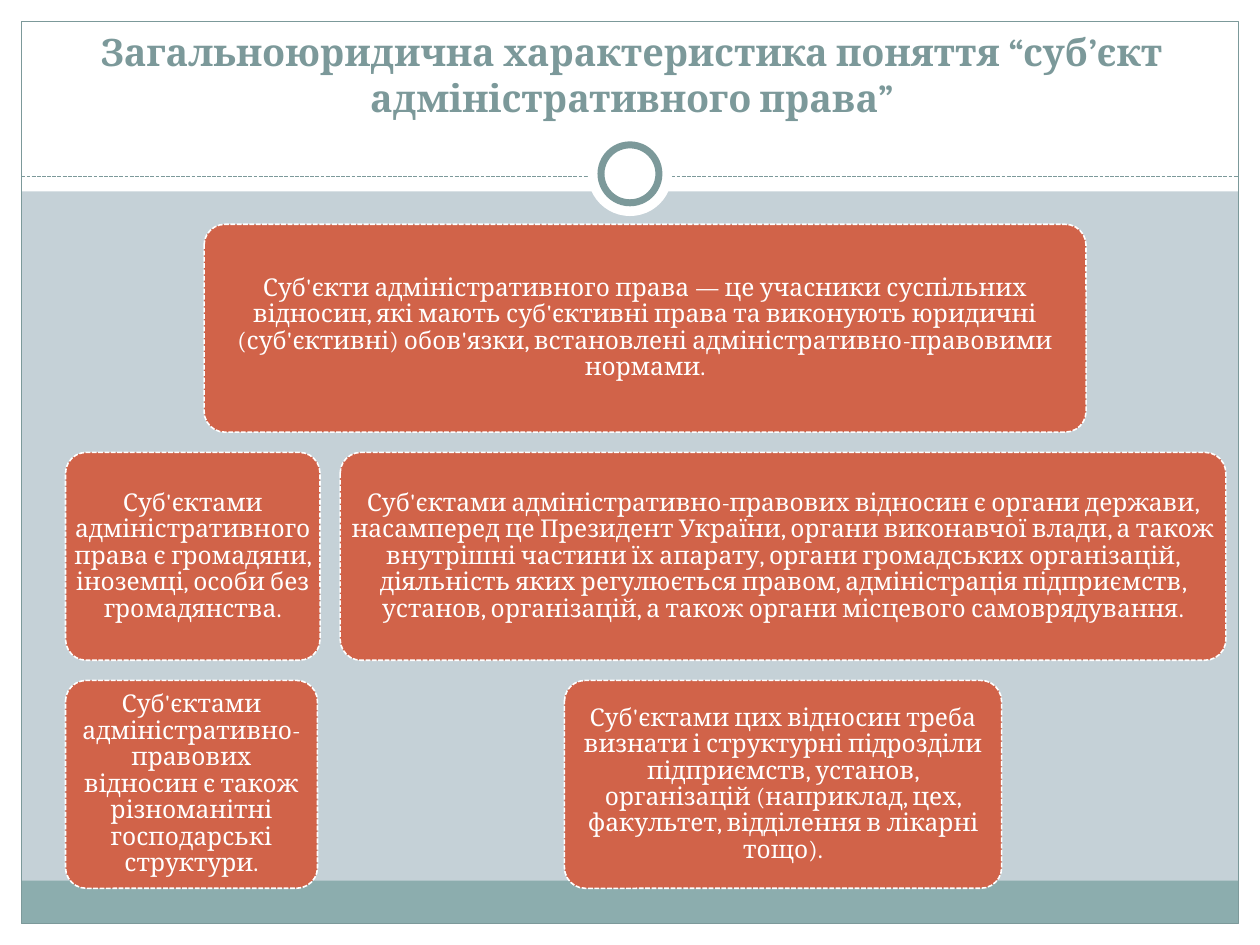
from lxml.etree import SubElement
from pptx import Presentation
from pptx.dml.color import RGBColor
from pptx.enum.dml import MSO_LINE
from pptx.enum.shapes import MSO_CONNECTOR, MSO_SHAPE
from pptx.enum.text import MSO_ANCHOR, PP_ALIGN
from pptx.oxml.ns import qn
from pptx.util import Inches, Pt

WHITE = RGBColor(0xFF, 0xFF, 0xFF)
MIST = RGBColor(0xC5, 0xD1, 0xD7)
TEAL = RGBColor(0x8C, 0xAD, 0xAE)
SLATE = RGBColor(0x7C, 0x99, 0x9A)
RUST = RGBColor(0xD1, 0x63, 0x49)

WIDTH, HEIGHT, MARGIN = 10, 7.5, 0.17
BOX_HEIGHT, ROW_STEP, FIRST_ROW = 1.65, 1.81, 1.78

TITLE = "Загальноюридична характеристика поняття “суб’єкт адміністративного права”"
BOXES = [
    (0, 1.62, 7, "Суб'єкти адміністративного права — це учасники суспільних відносин, "
     "які мають суб'єктивні права та виконують юридичні (суб'єктивні) обов'язки, "
     "встановлені адміністративно-правовими нормами."),
    (1, 0.52, 2.02, "Суб'єктами адміністративного права є громадяни, іноземці, "
     "особи без громадянства."),
    (2, 0.52, 2, "Суб'єктами адміністративно-правових відносин є також "
     "різноманітні господарські структури."),
    (1, 2.7, 7.03, "Суб'єктами адміністративно-правових відносин є органи держави, "
     "насамперед це Президент України, органи виконавчої влади, а також внутрішні "
     "частини їх апарату, органи громадських організацій, діяльність яких регулюється "
     "правом, адміністрація підприємств, установ, організацій, а також органи "
     "місцевого самоврядування."),
    (2, 4.48, 3.47, "Суб'єктами цих відносин треба визнати і структурні підрозділи "
     "підприємств, установ, організацій (наприклад, цех, факультет, відділення "
     "в лікарні тощо)."),
]


class SlideBuilder:
    """Hold the text style and the current slide, and add its elements."""

    font = {"name": "Cambria", "size": Pt(14), "bold": False}
    frame = {"word_wrap": True, "vertical_anchor": MSO_ANCHOR.MIDDLE,
             "margin_left": Inches(0.01), "margin_right": Inches(0.01),
             "margin_top": Inches(0.01), "margin_bottom": Inches(0.01)}

    def __init__(self, slide):
        self.s = slide

    def apply(self, target, values):
        for name, value in values.items():
            setattr(target, name, value)

    def background(self, color):
        fill = self.s.background.fill
        fill.solid()
        fill.fore_color.rgb = color

    def stroke(self, line, color, width, dash=None):
        line.color.rgb = color
        self.apply(line, {"width": Pt(width), "dash_style": dash})

    def shape(self, kind, left, top, width, height, fill=None, line=None):
        sp = self.s.shapes.add_shape(kind, Inches(left), Inches(top),
                                     Inches(width), Inches(height))
        sp.shadow.inherit = False
        if fill is None:
            sp.fill.background()
        else:
            sp.fill.solid()
            sp.fill.fore_color.rgb = fill
        if line is None:
            sp.line.fill.background()
        else:
            self.stroke(sp.line, *line)
        return sp

    def rule(self, left, right, y, line):
        cxn = self.s.shapes.add_connector(MSO_CONNECTOR.STRAIGHT, Inches(left), Inches(y),
                                          Inches(right), Inches(y))
        self.stroke(cxn.line, *line)
        SubElement(cxn._element.spPr, qn("a:effectLst"))

    def text(self, tf, text, color, frame=None, font=None, spacing=1.0):
        self.apply(tf, {**self.frame, **(frame or {})})
        p = tf.paragraphs[0]
        self.apply(p, {"alignment": PP_ALIGN.CENTER, "line_spacing": spacing})
        r = p.add_run()
        r.text = text
        self.apply(r.font, {**self.font, **(font or {})})
        r.font.color.rgb = color

    def box(self, row, left, width, text):
        sp = self.shape(MSO_SHAPE.ROUNDED_RECTANGLE, left, FIRST_ROW + row * ROW_STEP,
                        width, BOX_HEIGHT, RUST, (WHITE, 0.9, MSO_LINE.SQUARE_DOT))
        sp.adjustments[0] = 0.1
        self.text(sp.text_frame, text, WHITE, spacing=0.9)

    def title(self, text):
        sp = self.s.shapes.title
        self.apply(sp, {"left": Inches(0.35), "top": Inches(0.29),
                        "width": Inches(9.33), "height": Inches(1.07)})
        self.text(sp.text_frame, text, SLATE,
                  {"vertical_anchor": MSO_ANCHOR.BOTTOM, "margin_left": Inches(0.1),
                   "margin_right": Inches(0.1), "margin_bottom": Inches(0.41)},
                  {"size": Pt(21.6), "bold": True})
        self.s.shapes._spTree.append(sp._element)


def main():
    prs = Presentation()
    prs.slide_width, prs.slide_height = Inches(WIDTH), Inches(HEIGHT)
    b = SlideBuilder(prs.slides.add_slide(prs.slide_layouts[5]))
    b.background(MIST)

    inner_w, inner_h = WIDTH - 2 * MARGIN, HEIGHT - 2 * MARGIN
    for left, top, width, height, color in [
        (0, HEIGHT - MARGIN, WIDTH, MARGIN, WHITE),
        (0, 0, WIDTH, 1.52, WHITE),
        (0, 0, MARGIN, HEIGHT, WHITE),
        (WIDTH - MARGIN, 0, MARGIN, HEIGHT, WHITE),
        (MARGIN, 6.99, inner_w, 0.34, TEAL),
    ]:
        b.shape(MSO_SHAPE.RECTANGLE, left, top, width, height, color)
    b.shape(MSO_SHAPE.RECTANGLE, MARGIN, MARGIN, inner_w, inner_h, line=(SLATE, 0.75))
    b.rule(MARGIN, WIDTH - MARGIN, 1.4, (SLATE, 0.75, MSO_LINE.SQUARE_DOT))
    for size, line in [(0.67, None), (0.46, (SLATE, 4))]:
        b.shape(MSO_SHAPE.OVAL, (WIDTH - size) / 2, 1.38 - size / 2, size, size, WHITE, line)

    b.title(TITLE)
    for box in BOXES:
        b.box(*box)
    prs.save("out.pptx")


if __name__ == "__main__":
    main()
